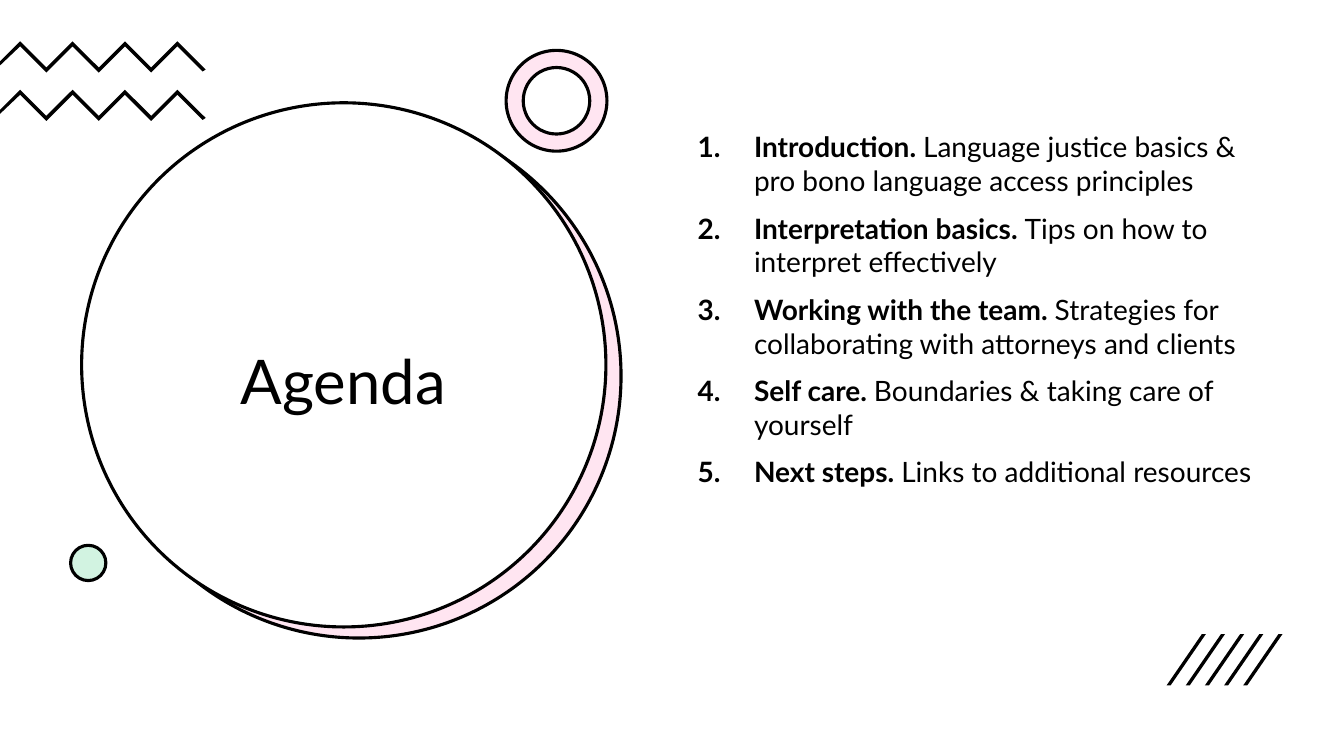
import pptx
import pptx.dml.color
import pptx.enum.shapes
import pptx.enum.text
import pptx.oxml
import pptx.oxml.ns
import pptx.util
from pptx.util import Inches

TITLE = "Agenda"
AGENDA = [
    ("Introduction.", "Language justice basics & pro bono language access principles"),
    ("Interpretation basics.", "Tips on how to interpret effectively"),
    ("Working with the team.", "Strategies for collaborating with attorneys and clients"),
    ("Self care.", "Boundaries & taking care of yourself"),
    ("Next steps.", "Links to additional resources"),
]

BLACK = pptx.dml.color.RGBColor(0, 0, 0)
WHITE = pptx.dml.color.RGBColor(255, 255, 255)
PINK = pptx.dml.color.RGBColor(0xFF, 0x80, 0xBD)
GREEN = pptx.dml.color.RGBColor(0x21, 0xC4, 0x6B)
FONT = "Lato"
OVAL = pptx.enum.shapes.MSO_SHAPE.OVAL
DONUT = pptx.enum.shapes.MSO_SHAPE.DONUT

# preset, left, top, diameter, colour, opacity in percent
ROUNDS = [
    (OVAL, 0.96, 1.13, 5.2, PINK, 20),
    (OVAL, 0.81, 1.02, 5.2, WHITE, 100),
    (DONUT, 5.02, 0.5, 1, PINK, 20),
    (OVAL, 0.7, 5.41, 0.35, GREEN, 20),
]
RING_THICKNESS = 0.17

ZIGZAG_TOPS = (0.41, 0.89)
ZIGZAG_START, ZIGZAG_STEP, ZIGZAG_POINTS = 0.2, 0.26, 7
ZIGZAG_DEPTH, ZIGZAG_THICKNESS = 0.26, 0.05

SLASH_COUNT, SLASH_LEFT, SLASH_PITCH = 5, 11.57, 0.19
SLASH_TOP, SLASH_BOTTOM, SLASH_SLANT, SLASH_WIDTH = 6.29, 6.8, 0.35, 0.04


def add_round(slide, preset, left, top, diameter, colour, opacity):
    shape = slide.shapes.add_shape(
        preset, Inches(left), Inches(top), Inches(diameter), Inches(diameter))
    shape.shadow.inherit = False
    shape.fill.solid()
    shape.fill.fore_color.rgb = colour
    if opacity < 100:
        colour_element = shape.element.spPr.find(".//" + pptx.oxml.ns.qn("a:srgbClr"))
        colour_element.append(pptx.oxml.parse_xml(
            f'<a:alpha {pptx.oxml.ns.nsdecls("a")} val="{opacity * 1000}"/>'))
    shape.line.color.rgb = BLACK
    shape.line.width = pptx.util.Pt(2.25)
    if preset == DONUT:
        shape.adjustments[0] = RING_THICKNESS


def add_black_outline(slide, points):
    corners = [(Inches(x), Inches(y)) for x, y in points]
    builder = slide.shapes.build_freeform(*corners[0])
    builder.add_line_segments(corners[1:], close=True)
    shape = builder.convert_to_shape()
    shape.shadow.inherit = False
    shape.fill.solid()
    shape.fill.fore_color.rgb = BLACK
    shape.line.fill.background()


def zigzag_points(top):
    """Upper edge from left to right, then lower edge back to the slide's side."""
    upper = [(ZIGZAG_START + i * ZIGZAG_STEP, top + i % 2 * ZIGZAG_DEPTH)
             for i in range(ZIGZAG_POINTS)]
    lower = [(x, y + ZIGZAG_THICKNESS) for x, y in reversed(upper)]
    right_end = [(2.04, top + 0.28), (2.01, top + 0.3)]
    left_end = [(0, top + 0.24), (0, top + 0.2)]
    return upper + right_end + lower + left_end


def slash_points(left):
    right = left + SLASH_SLANT
    return [(left + SLASH_WIDTH, SLASH_BOTTOM), (left, SLASH_BOTTOM),
            (right, SLASH_TOP), (right + SLASH_WIDTH, SLASH_TOP)]


def set_font(paragraph, size):
    paragraph.font.name = FONT
    paragraph.font.size = pptx.util.Pt(size)
    paragraph.font.color.rgb = BLACK


def format_title(slide):
    title = slide.shapes.title
    title.left, title.top = Inches(1.2), Inches(2.06)
    title.width, title.height = Inches(4.41), Inches(3.52)
    title.element.getparent().append(title.element)  # in front of the circle
    frame = title.text_frame
    frame.text = TITLE
    frame.auto_size = pptx.enum.text.MSO_AUTO_SIZE.NONE
    frame.vertical_anchor = pptx.enum.text.MSO_ANCHOR.MIDDLE
    paragraph = frame.paragraphs[0]
    paragraph.alignment = pptx.enum.text.PP_ALIGN.CENTER
    paragraph.line_spacing = 0.9
    set_font(paragraph, 44)


def add_agenda(slide):
    box = slide.shapes.add_textbox(Inches(6.82), Inches(1.24), Inches(5.71), Inches(4.76))
    frame = box.text_frame
    frame.word_wrap = True
    for index, (heading, detail) in enumerate(AGENDA):
        paragraph = frame.paragraphs[0] if index == 0 else frame.add_paragraph()
        if index:
            paragraph.space_before = pptx.util.Pt(10)
        properties = paragraph._p.get_or_add_pPr()
        properties.set("marL", str(Inches(0.56)))
        properties.set("indent", str(-Inches(0.56)))
        properties.append(pptx.oxml.parse_xml(
            f'<a:buAutoNum {pptx.oxml.ns.nsdecls("a")} type="arabicPeriod"/>'))
        set_font(paragraph, 20)
        heading_run = paragraph.add_run()
        heading_run.text = heading + " "
        heading_run.font.bold = True
        paragraph.add_run().text = detail


def main():
    presentation = pptx.Presentation()
    presentation.slide_width, presentation.slide_height = Inches(13.33), Inches(7.5)
    slide = presentation.slides.add_slide(presentation.slide_layouts.get_by_name("Title Only"))
    slide.background.fill.solid()
    slide.background.fill.fore_color.rgb = WHITE
    for round_shape in ROUNDS:
        add_round(slide, *round_shape)
    format_title(slide)
    for top in ZIGZAG_TOPS:
        add_black_outline(slide, zigzag_points(top))
    add_agenda(slide)
    for index in range(SLASH_COUNT):
        add_black_outline(slide, slash_points(SLASH_LEFT + index * SLASH_PITCH))
    presentation.save("out.pptx")


if __name__ == "__main__":
    main()
